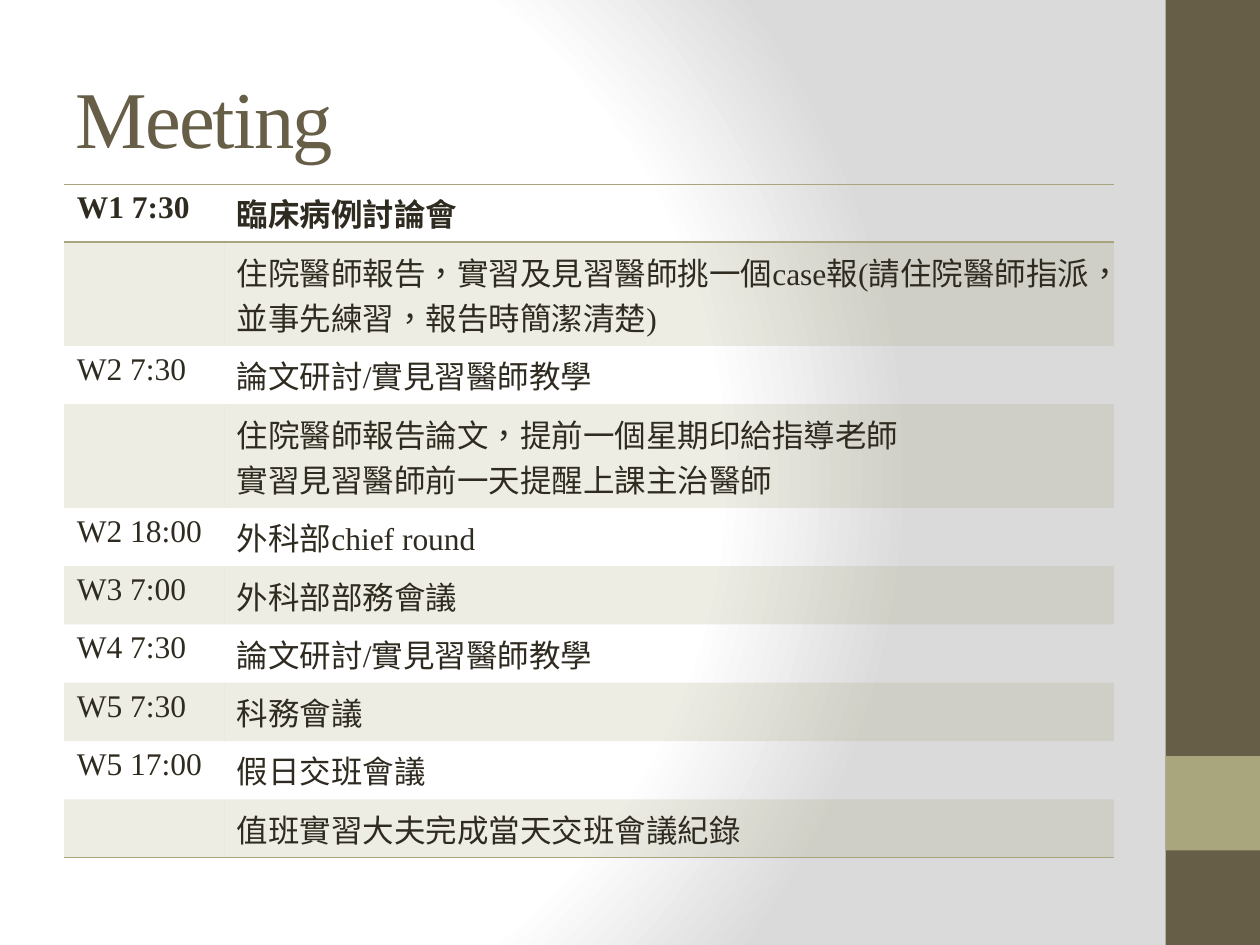
from lxml import etree
from pptx import Presentation
from pptx import util as u
from pptx.dml.color import RGBColor
from pptx.enum import lang, shapes, text
from pptx.oxml import ns, parse_xml

WHITE = RGBColor(0xFF, 0xFF, 0xFF)
GREY = RGBColor(0xDA, 0xDA, 0xDA)
BROWN = RGBColor(0x67, 0x5E, 0x47)
OLIVE = RGBColor(0xA9, 0xA5, 0x7C)
INK = RGBColor(0x2F, 0x2B, 0x20)
WIDTH, HEIGHT = u.Inches(10), u.Inches(7.5)
FACE = "Times New Roman"
NO_STYLE = "{2D5ABB26-0587-4C30-8999-92F81FD0307C}"
TITLE_FORMAT = {"name": FACE, "size": u.Pt(46)}
CELL_FORMAT = {"name": FACE, "size": u.Pt(18),
               "language_id": lang.MSO_LANGUAGE_ID.TRADITIONAL_CHINESE}
COLUMN_SHARES = (1.27 / 8.33, 7.06 / 8.33)
LINE_UNITS = {1: 9, 2: 16}
MEETINGS = [
    ("W1 7:30", "臨床病例討論會", 1),
    ("", "住院醫師報告，實習及見習醫師挑一個case報(請住院醫師指派，並事先練習，報告時簡潔清楚)", 2),
    ("W2 7:30", "論文研討/實見習醫師教學", 1),
    ("", "住院醫師報告論文，提前一個星期印給指導老師\n實習見習醫師前一天提醒上課主治醫師", 2),
    ("W2 18:00", "外科部chief round", 1),
    ("W3 7:00", "外科部部務會議", 1),
    ("W4 7:30", "論文研討/實見習醫師教學", 1),
    ("W5 7:30", "科務會議", 1),
    ("W5 17:00", "假日交班會議", 1),
    ("", "值班實習大夫完成當天交班會議紀錄", 1),
]


def place(left, top, width, height):
    """Turn shares of the slide into a box of lengths."""
    return (int(left * WIDTH), int(top * HEIGHT),
            int(width * WIDTH), int(height * HEIGHT))


def format_font(font, values, color):
    """Set font attributes and colour."""
    for key, value in values.items():
        setattr(font, key, value)
    font.color.rgb = color


def add_background(slide):
    """Lay a radial gradient behind the slide."""
    stops = "".join(f'<a:gs pos="{share * 1000}"><a:srgbClr val="{color}"/></a:gs>'
                    for share, color in ((0, WHITE), (75, WHITE), (100, GREY)))
    background = parse_xml(
        f'<p:bg {ns.nsdecls("p", "a")}><p:bgPr><a:gradFill rotWithShape="1">'
        f'<a:gsLst>{stops}</a:gsLst><a:path path="circle">'
        '<a:fillToRect l="20000" t="50000" r="100000" b="50000"/></a:path>'
        '</a:gradFill><a:effectLst/></p:bgPr></p:bg>')
    slide.element.cSld.insert(0, background)


def add_sidebar(slide, box):
    """Draw the side band with a square accent block."""
    left, top, width, height = box
    accent = (left, top + height * 4 // 5, width, width)
    for area, color in ((box, BROWN), (accent, OLIVE)):
        band = slide.shapes.add_shape(shapes.MSO_SHAPE.RECTANGLE, *area)
        band.shadow.inherit = False
        band.fill.solid()
        band.fill.fore_color.rgb = color
        band.line.fill.background()


def add_title(slide, box):
    """Write the heading."""
    frame = slide.shapes.add_textbox(*box).text_frame
    frame.word_wrap = True
    frame.vertical_anchor = text.MSO_ANCHOR.MIDDLE
    heading = frame.paragraphs[0].add_run()
    heading.text = "Meeting"
    format_font(heading.font, TITLE_FORMAT, BROWN)
    heading.font._element.set("spc", "-100")


def style_cell(cell, banded, edges):
    """Fill a cell and rule the given edges."""
    properties = cell._tc.get_or_add_tcPr()
    if banded:
        cell.fill.solid()
        cell.fill.fore_color.rgb = OLIVE
        tint = properties.find(".//" + ns.qn("a:srgbClr"))
        etree.SubElement(tint, ns.qn("a:alpha"), val="20000")
    else:
        cell.fill.background()
    for order, (edge, weight) in enumerate(edges.items()):
        properties.insert(order, parse_xml(
            f'<a:{edge} {ns.nsdecls("a")} w="{u.Pt(weight)}"><a:solidFill>'
            f'<a:srgbClr val="{OLIVE}"/></a:solidFill></a:{edge}>'))


def add_schedule(slide, box):
    """Build the banded meeting table."""
    schedule = slide.shapes.add_table(len(MEETINGS), 2, *box).table
    schedule._tbl.tblPr.find(ns.qn("a:tableStyleId")).text = NO_STYLE
    for column, share in zip(schedule.columns, COLUMN_SHARES):
        column.width = int(box[2] * share)
    unit = box[3] / sum(LINE_UNITS[lines] for *_, lines in MEETINGS)
    rules = {0: {"lnT": 0.5, "lnB": 1}, len(MEETINGS) - 1: {"lnB": 0.5}}
    for row, (*meeting, lines) in enumerate(MEETINGS):
        schedule.rows[row].height = int(unit * LINE_UNITS[lines])
        for column, wording in enumerate(meeting):
            cell = schedule.cell(row, column)
            cell.text = wording
            style_cell(cell, row % 2 == 1, rules.get(row, {}))
            for paragraph in cell.text_frame.paragraphs:
                for run in paragraph.runs:
                    format_font(run.font, {**CELL_FORMAT, "bold": row == 0}, INK)


def main():
    """Assemble and save the slide."""
    deck = Presentation()
    deck.slide_width, deck.slide_height = WIDTH, HEIGHT
    slide = deck.slides.add_slide(deck.slide_layouts[6])
    add_background(slide)
    add_sidebar(slide, place(0.925, 0, 0.075, 1))
    add_title(slide, place(0.05, 0.04, 0.83, 1 / 6))
    add_schedule(slide, (u.Inches(0.51), u.Inches(1.46), u.Inches(8.33), u.Inches(5.35)))
    deck.save("out.pptx")


if __name__ == "__main__":
    main()
